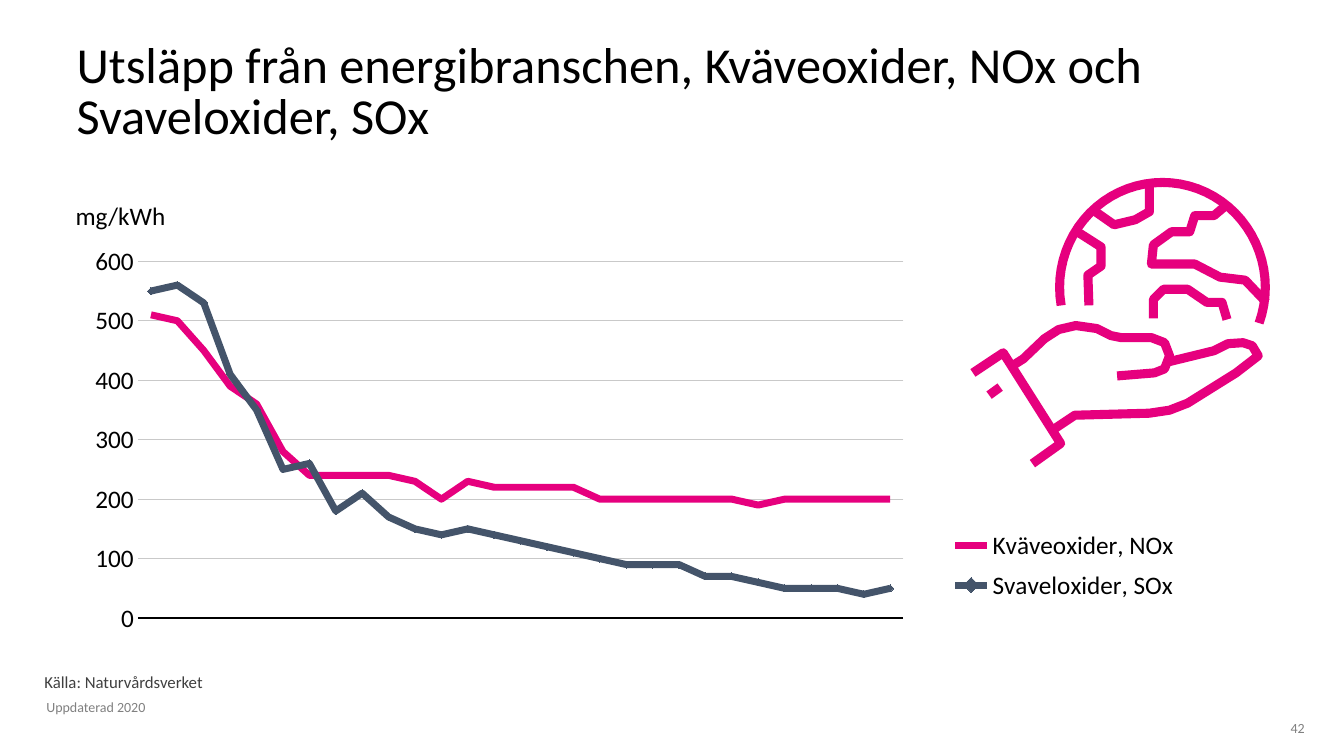
"""Build the slide on NOx and SOx emissions from the energy sector."""
from math import cos, radians, sin

from pptx import Presentation
from pptx.chart.data import CategoryChartData
from pptx.dml.color import RGBColor
from pptx.enum import chart as ch, text as tx
from pptx.oxml import parse_xml
from pptx.oxml.ns import nsdecls, qn
from pptx.util import Inches, Pt

FONT = "Calibri"
COLORS = {
    "text": "000000", "source": "404040", "muted": "808080",
    "grid": "C9C9C9", "nox": "E6007E", "sox": "44546A",
}
RGB = {name: RGBColor.from_string(value) for name, value in COLORS.items()}


def write(frame, words, size, color, spacing, align):
    """Put one formatted run in a text frame without margins."""
    frame.word_wrap = True
    frame.margin_left = frame.margin_right = frame.margin_top = frame.margin_bottom = 0
    paragraph = frame.paragraphs[0]
    paragraph.line_spacing = spacing
    paragraph.alignment = align
    run = paragraph.add_run()
    run.text = words
    run.font.name, run.font.size = FONT, Pt(size)
    run.font.color.rgb = RGB[color]


def place(part, index, target, x, y, w, h):
    """Give a chart part a manual layout in fractions of the chart."""
    for old in part.findall(qn("c:layout")):
        part.remove(old)
    inner = f'<c:layoutTarget val="{target}"/>' if target else ""
    part.insert(index, parse_xml(
        f'<c:layout {nsdecls("c")}><c:manualLayout>{inner}'
        '<c:xMode val="edge"/><c:yMode val="edge"/>'
        f'<c:x val="{x}"/><c:y val="{y}"/><c:w val="{w}"/><c:h val="{h}"/>'
        '</c:manualLayout></c:layout>'))


prs = Presentation()
prs.slide_width, prs.slide_height = Inches(13.33), Inches(7.5)
slide = prs.slides.add_slide(prs.slide_layouts[5])

title = slide.shapes.title
title.left, title.top, title.width, title.height = map(Inches, (0.76, 0.37, 11.87, 1.07))
write(title.text_frame, "Utsläpp från energibranschen, Kväveoxider, NOx och Svaveloxider, SOx",
      36, "text", 0.85, tx.PP_ALIGN.LEFT)
title.text_frame.vertical_anchor = tx.MSO_ANCHOR.BOTTOM
title.text_frame.auto_size = tx.MSO_AUTO_SIZE.NONE

labels = [
    ("Källa: Naturvårdsverket", 0.44, 6.66, 4.86, 0.23, 12, "source", tx.PP_ALIGN.LEFT),
    ("42", 12.55, 7.13, 0.39, 0.2, 10, "muted", tx.PP_ALIGN.RIGHT),
    ("mg/kWh", 0.75, 2.02, 1.09, 0.27, 18, "text", tx.PP_ALIGN.LEFT),
    ("Uppdaterad 2020", 0.46, 6.95, 1.25, 0.15, 10, "muted", tx.PP_ALIGN.LEFT),
]
for words, x, y, w, h, size, color, align in labels:
    label = slide.shapes.add_textbox(*map(Inches, (x, y, w, h)))
    write(label.text_frame, words, size, color, 0.9, align)
    label.text_frame.vertical_anchor = tx.MSO_ANCHOR.MIDDLE

globe = [(11.53 + 1.02 * cos(radians(angle)), 2.85 + 1.04 * sin(radians(angle)))
         for angle in range(170, 381, 5)]
cuff = [(9.65, 3.7), (9.95, 3.5), (10.52, 4.4), (10.24, 4.6)]
button = [(9.81, 3.92), (9.92, 3.84)]
thumb = [(10.04, 3.63), (10.15, 3.56), (10.36, 3.36), (10.5, 3.27), (10.67, 3.23),
         (10.88, 3.26), (11.02, 3.33), (11.12, 3.35), (11.42, 3.35), (11.55, 3.4),
         (11.6, 3.53), (11.55, 3.66), (11.45, 3.7), (11.08, 3.73)]
palm = [(10.45, 4.26), (10.66, 4.12), (11.4, 4.1), (11.6, 4.07), (11.78, 4),
        (12.26, 3.7), (12.48, 3.53), (12.42, 3.43), (12.33, 3.4), (12.18, 3.41),
        (12.04, 3.48), (11.59, 3.59)]
east = [(12.56, 3), (12.35, 2.78), (12.1, 2.75), (11.85, 2.62), (11.42, 2.62),
        (11.44, 2.43), (11.62, 2.3), (11.8, 2.3), (11.85, 2.14), (12.04, 2.14),
        (12.17, 2.03)]
south = [(11.44, 3.16), (11.44, 2.97), (11.54, 2.87), (11.78, 2.87), (11.97, 3),
         (12.12, 3), (12.17, 3.17)]
north = [(10.85, 2.09), (11.05, 2.23), (11.26, 2.18), (11.4, 2.1), (11.4, 1.82)]
west = [(10.8, 3.03), (10.79, 2.73), (10.92, 2.64), (10.92, 2.45), (10.67, 2.29)]

strokes = []
for points in (cuff, button, thumb, palm, globe, east, south, north, west):
    corners = [(Inches(x), Inches(y)) for x, y in points]
    builder = slide.shapes.build_freeform(*corners[0])
    builder.add_line_segments(corners[1:], close=False)
    stroke = builder.convert_to_shape()
    stroke.fill.background()
    stroke.line.color.rgb = RGB["nox"]
    stroke.line.width = Pt(6.5)
    stroke.shadow.inherit = False
    strokes.append(stroke)
slide.shapes.add_group_shape(strokes)

emissions = CategoryChartData()
emissions.categories = [str(year) for year in range(1990, 2019)]
emissions.add_series("Kväveoxider, NOx", [
    510, 500, 450, 390, 360, 280, *[240] * 4, 230, 200, 230, *[220] * 4,
    *[200] * 6, 190, *[200] * 5])
emissions.add_series("Svaveloxider, SOx", [
    550, 560, 530, 410, 350, 250, 260, 180, 210, 170, 150, 140, 150, 140, 130,
    120, 110, 100, *[90] * 3, 70, 70, 60, *[50] * 3, 40, 50])
chart = slide.shapes.add_chart(ch.XL_CHART_TYPE.LINE_MARKERS,
                               *map(Inches, (0.44, 1.68, 12.19, 4.91)), emissions).chart
chart.has_title = False
chart.font.name, chart.font.size = FONT, Pt(18)
chart.font.color.rgb = RGB["text"]
chart.has_legend = True
chart.legend.position = ch.XL_LEGEND_POSITION.RIGHT
chart.legend.include_in_layout = False
plot = chart.plots[0]
plot.vary_by_categories = False
chart_root = chart.element.chart
place(chart_root.plotArea, 0, "inner", 0.076, 0.186, 0.623, 0.721)
place(chart_root.find(qn("c:legend")), 1, None, 0.73, 0.71, 0.2, 0.18)

years, amounts = chart.category_axis, chart.value_axis
for axis in (years, amounts):
    axis.major_tick_mark = axis.minor_tick_mark = ch.XL_TICK_MARK.NONE
years.tick_label_position = ch.XL_TICK_LABEL_POSITION.NONE
years.format.line.color.rgb = RGB["text"]
years.format.line.width = Pt(1.5)
amounts.minimum_scale, amounts.maximum_scale, amounts.major_unit = 0, 600, 100
amounts.tick_labels.number_format = "0;[Red]0"
amounts.tick_labels.number_format_is_linked = False
amounts.format.line.fill.background()
amounts.major_gridlines.format.line.color.rgb = RGB["grid"]
amounts.major_gridlines.format.line.width = Pt(0.75)

nox, sox = plot.series
for series, color in ((nox, "nox"), (sox, "sox")):
    series.smooth = False
    series.format.line.color.rgb = RGB[color]
    series.format.line.width = Pt(5)
nox.marker.style = ch.XL_MARKER_STYLE.NONE
sox.marker.style = ch.XL_MARKER_STYLE.DIAMOND
sox.marker.size = 5
sox.marker.format.fill.solid()
sox.marker.format.fill.fore_color.rgb = RGB["sox"]
sox.marker.format.line.fill.background()

prs.save("out.pptx")
